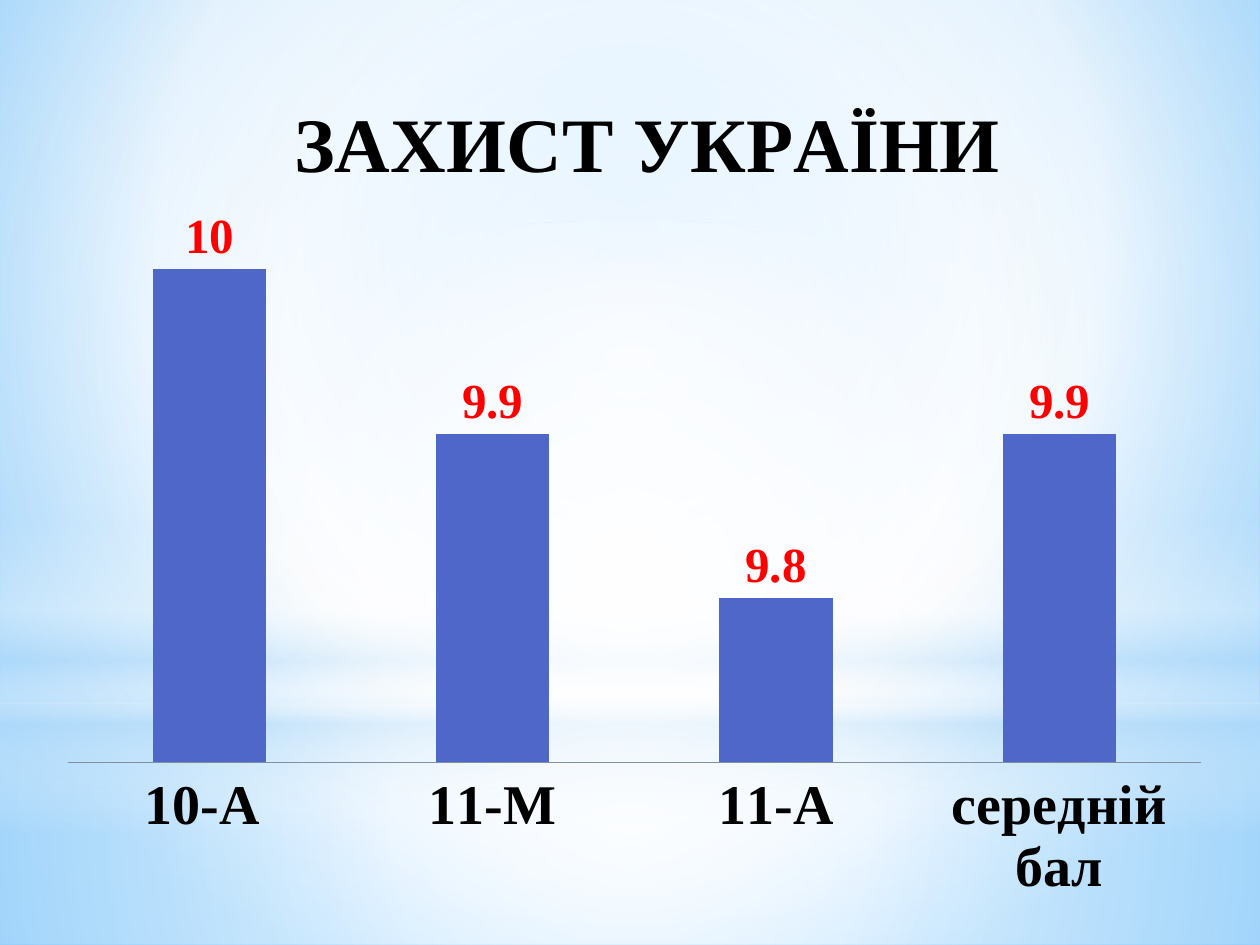
from lxml import etree
from pptx import Presentation
from pptx.chart.data import CategoryChartData
from pptx.dml.color import RGBColor
from pptx.enum.chart import XL_CHART_TYPE as Kind, XL_LABEL_POSITION as Spot
from pptx.enum.chart import XL_TICK_LABEL_POSITION as Tick, XL_TICK_MARK as Mark
from pptx.enum.shapes import MSO_SHAPE as Shape
from pptx.oxml import parse_xml
from pptx.oxml.ns import nsdecls, qn
from pptx.util import Inches, Pt

BLACK = RGBColor(0, 0, 0)
RED = RGBColor(255, 0, 0)
BLUE = RGBColor(0x4E, 0x67, 0xC8)
GREY = RGBColor(0x80, 0x90, 0xA0)
WHITE = RGBColor(255, 255, 255)
PALE = RGBColor(0xB4, 0xDC, 0xFA)
SKY = RGBColor(0x9E, 0xD5, 0xFF)
DEEP = RGBColor(0x5B, 0xB9, 0xFF)
SERIF = "Times New Roman"
CENTRE = (50, 50, 50, 50)


def shade(fill, root, stops, focus=None):
    """Fill with (position, colour, opacity) stops, round a focus or downwards."""
    fill.solid()
    marks = "".join(
        f'<a:gs pos="{pos * 1000}"><a:srgbClr val="{color}">'
        f'<a:alpha val="{alpha * 1000}"/></a:srgbClr></a:gs>'
        for pos, color, alpha in stops)
    if focus:
        sides = " ".join(f'{s}="{v * 1000}"' for s, v in zip("ltrb", focus))
        course = f'<a:path path="circle"><a:fillToRect {sides}/></a:path>'
    else:
        course = '<a:lin ang="5400000" scaled="0"/>'
    old = root.xpath(".//a:solidFill")[0]
    old.getparent().replace(old, parse_xml(
        f'<a:gradFill {nsdecls("a")} rotWithShape="1">'
        f'<a:gsLst>{marks}</a:gsLst>{course}</a:gradFill>'))


def add_glow(slide, kind, top, height, stops, focus=None):
    glow = slide.shapes.add_shape(
        kind, 0, Inches(top), Inches(10), Inches(height))
    glow.shadow.inherit = False
    glow.line.fill.background()
    shade(glow.fill, glow._element.spPr, stops, focus)


def style(font, size, color):
    font.name = SERIF
    font.size = Pt(size)
    font.bold = True
    font.color.rgb = color


def place(parent, **sizes):
    """Give a chart part a manual layout in fractions of the chart."""
    for old in parent.findall(qn("c:layout")):
        parent.remove(old)
    layout = etree.Element(qn("c:layout"))
    manual = etree.SubElement(layout, qn("c:manualLayout"))
    for name, value in sizes.items():
        etree.SubElement(manual, qn(f"c:{name}")).set("val", str(value))
    text = parent.find(qn("c:tx"))
    if text is None:
        parent.insert(0, layout)
    else:
        text.addnext(layout)


def add_marks(slide):
    data = CategoryChartData()
    data.categories = ["10-А ", "11-М", "11-А", "середній бал"]
    data.add_series("Series 1", [10, 9.9, 9.8, 9.9])
    chart = slide.shapes.add_chart(
        Kind.COLUMN_CLUSTERED, Inches(0.35), Inches(0.36),
        Inches(9.37), Inches(6.85), data).chart
    chart.font.name = "Karla"
    chart.font.size = Pt(10)
    chart.font.color.rgb = BLACK
    chart.has_legend = False

    chart.has_title = True
    title = chart.chart_title
    title.text_frame.text = "ЗАХИСТ УКРАЇНИ"
    style(title.text_frame.paragraphs[0].runs[0].font, 44, BLACK)
    title.include_in_layout = False
    place(title._element, xMode="edge", yMode="edge", x=0.2, y=0.04)

    values = chart.value_axis
    values.visible = False
    values.has_major_gridlines = False
    values.minimum_scale = 9.7
    values.maximum_scale = 10.05

    groups = chart.category_axis
    groups.major_tick_mark = Mark.NONE
    groups.tick_label_position = Tick.LOW
    groups.format.line.color.rgb = GREY
    groups.format.line.width = Pt(0.75)
    style(groups.tick_labels.font, 32, BLACK)

    plot = chart.plots[0]
    plot.gap_width = 150
    plot.vary_by_categories = False
    bars = plot.series[0]
    bars.format.fill.solid()
    bars.format.fill.fore_color.rgb = BLUE
    labels = bars.data_labels
    labels.show_value = True
    labels.position = Spot.OUTSIDE_END
    style(labels.font, 28, RED)
    area = chart._chartSpace.chart.plotArea
    place(area, layoutTarget="inner", xMode="edge", yMode="edge",
          x=0.02, y=0.164, w=0.96, h=0.667)


def main():
    deck = Presentation()
    deck.slide_width = Inches(10)
    deck.slide_height = Inches(7.5)
    slide = deck.slides.add_slide(deck.slide_layouts[6])
    shade(slide.background.fill, slide._element,
          [(0, SKY, 100), (60, WHITE, 100), (100, DEEP, 100)],
          (20, 10, 20, 60))
    add_glow(slide, Shape.RECTANGLE, 5.58, 1.92,
             [(0, WHITE, 91), (37, WHITE, 76), (100, PALE, 79)], CENTRE)
    add_glow(slide, Shape.RECTANGLE, 0, 5.58,
             [(0, WHITE, 89), (48, WHITE, 62), (100, PALE, 79)], CENTRE)
    add_glow(slide, Shape.RECTANGLE, 4.12, 2.5,
             [(0, WHITE, 0), (29, WHITE, 30), (45, PALE, 40),
              (55, WHITE, 26), (65, PALE, 60), (100, WHITE, 0)])
    add_glow(slide, Shape.OVAL, 1.75, 5.58,
             [(0, WHITE, 100), (56, WHITE, 0)], CENTRE)
    add_marks(slide)
    deck.save("out.pptx")


if __name__ == "__main__":
    main()
